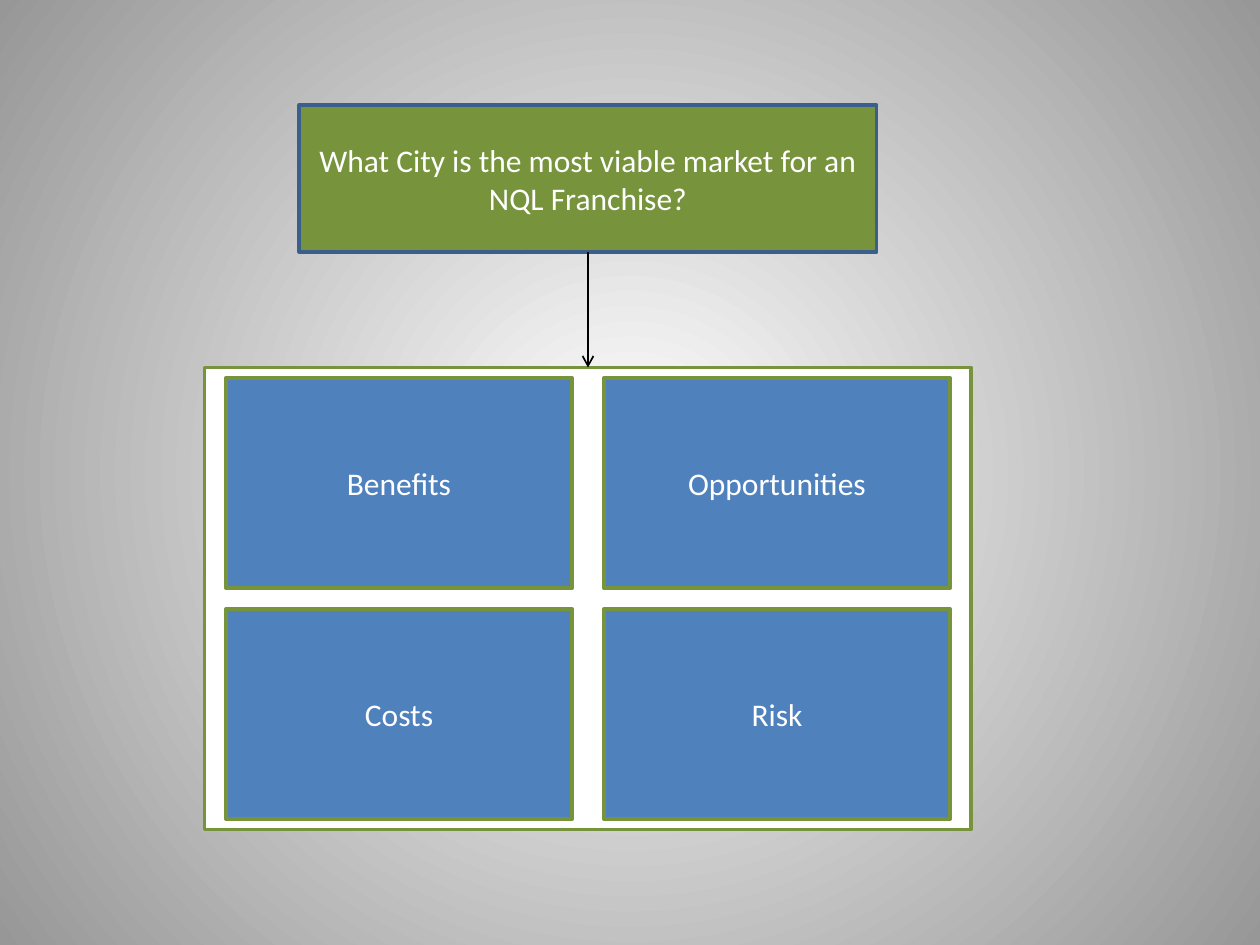
from dataclasses import dataclass

from lxml.etree import SubElement
from pptx import Presentation
from pptx.dml.color import RGBColor as RGB
from pptx.enum.shapes import MSO_CONNECTOR as CONN, MSO_SHAPE as SHAPE
from pptx.enum.text import MSO_ANCHOR as ANCHOR, PP_ALIGN as ALIGN
from pptx.oxml.ns import qn
from pptx.util import Inches, Pt

PX = Inches(1) // 120


@dataclass(frozen=True)
class Theme:
    """Colours, font and sizes of the slide."""
    glow: RGB = RGB.from_string("FFFFFF")
    edge: RGB = RGB.from_string("979797")
    white: RGB = RGB.from_string("FFFFFF")
    green: RGB = RGB.from_string("77933C")
    blue: RGB = RGB.from_string("4F81BD")
    navy: RGB = RGB.from_string("3A5F8C")
    black: RGB = RGB.from_string("000000")
    font: str = "Calibri"
    body: Pt = Pt(18)
    border: Pt = Pt(2)
    arrow: Pt = Pt(1)


THEME = Theme()


def paint_background(slide):
    """Fill the slide with a circular gradient from its centre."""
    fill = slide.background.fill
    fill.gradient()
    for stop, color in zip(fill.gradient_stops, (THEME.glow, THEME.edge)):
        stop.color.rgb = color
    grad = slide.element.find(".//" + qn("a:gradFill"))
    grad.remove(grad.find(qn("a:lin")))
    circle = SubElement(grad, qn("a:path"), path="circle")
    SubElement(circle, qn("a:fillToRect"), l="50000", t="50000", r="50000", b="50000")


def add_box(shapes, box, fill, line, text=""):
    """Add a bordered rectangle with optional centred text."""
    sp = shapes.add_shape(SHAPE.RECTANGLE, *(v * PX for v in box))
    sp.shadow.inherit = False
    sp.fill.solid()
    sp.fill.fore_color.rgb = fill
    sp.line.color.rgb = line
    sp.line.width = THEME.border
    if text:
        tf = sp.text_frame
        tf.text = text
        tf.word_wrap = True
        tf.vertical_anchor = ANCHOR.MIDDLE
        p = tf.paragraphs[0]
        p.alignment = ALIGN.CENTER
        font = p.runs[0].font
        font.name, font.size = THEME.font, THEME.body
        font.color.rgb = THEME.white
    return sp


def add_factor_panel(shapes, box, factors):
    """Add a white panel holding a two-column grid of factors."""
    left, top, width, height = box
    pad_x, pad_y, gap_x, gap_y, cols = 20, 10, 30, 20, 2
    rows = len(factors) // cols
    w = (width - 2 * pad_x - (cols - 1) * gap_x) // cols
    h = (height - 2 * pad_y - (rows - 1) * gap_y) // rows
    panel = add_box(shapes, box, THEME.white, THEME.green)
    for i, factor in enumerate(factors):
        row, col = divmod(i, cols)
        cell = (left + pad_x + col * (w + gap_x), top + pad_y + row * (h + gap_y), w, h)
        add_box(shapes, cell, THEME.blue, THEME.green, factor)
    return panel


def add_arrow(shapes, upper, lower):
    """Join the bottom of one box to the top of another with an arrow."""
    cxn = shapes.add_connector(CONN.STRAIGHT, 0, 0, 0, 0)
    cxn.begin_connect(upper, 2)
    cxn.end_connect(lower, 0)
    cxn.line.color.rgb = THEME.black
    cxn.line.width = THEME.arrow
    SubElement(cxn.line._get_or_add_ln(), qn("a:tailEnd"), type="arrow")
    SubElement(cxn.element.spPr, qn("a:effectLst"))


def main():
    """Build and save the slide."""
    prs = Presentation()
    prs.slide_width, prs.slide_height = 1200 * PX, 900 * PX
    slide = prs.slides.add_slide(prs.slide_layouts[6])
    paint_background(slide)
    shapes = slide.shapes.add_group_shape().shapes
    question = add_box(shapes, (285, 100, 550, 140), THEME.green, THEME.navy,
                       "What City is the most viable market for an NQL Franchise?")
    panel = add_factor_panel(shapes, (195, 350, 730, 440),
                             ("Benefits", "Opportunities", "Costs", "Risk"))
    add_arrow(shapes, question, panel)
    prs.save("out.pptx")


if __name__ == "__main__":
    main()
